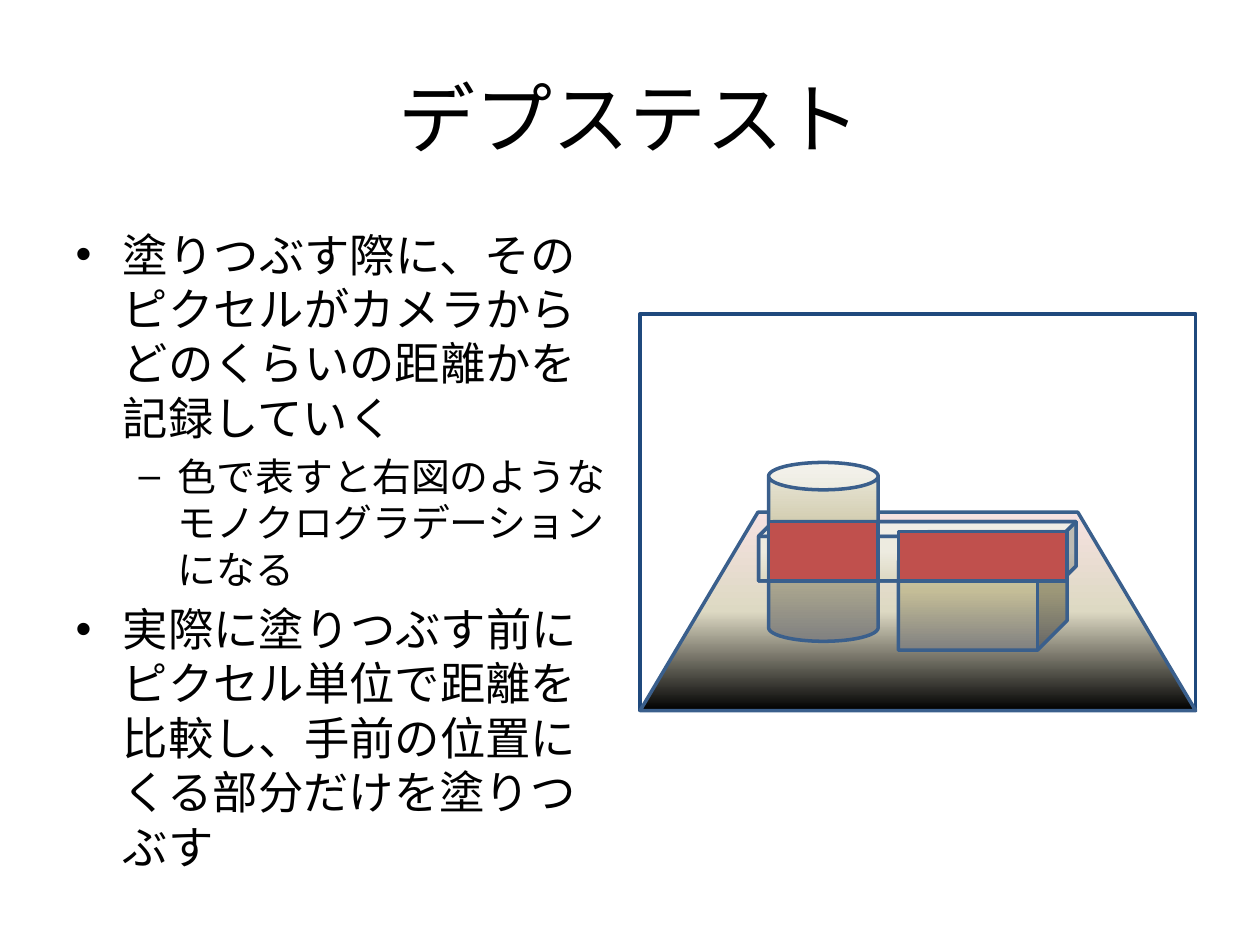
from lxml import etree
from pptx import Presentation
from pptx.dml.color import RGBColor
from pptx.enum.shapes import MSO_SHAPE as Preset
from pptx.enum.text import MSO_ANCHOR, MSO_AUTO_SIZE, PP_ALIGN
from pptx.oxml.ns import qn
from pptx.util import Inches, Pt

FONT = "Noto Sans CJK JP"
BLACK = RGBColor(0x00, 0x00, 0x00)
WHITE = RGBColor(0xFF, 0xFF, 0xFF)
NAVY = RGBColor(0x1F, 0x49, 0x7D)
OUTLINE = RGBColor(0x3A, 0x5F, 0x8C)
RED = RGBColor(0xC0, 0x50, 0x4D)
GREY = RGBColor(0x80, 0x80, 0x80)
KHAKI = RGBColor(0xC4, 0xBD, 0x97)
SAND = RGBColor(0xDD, 0xD9, 0xC3)
CREAM = RGBColor(0xEE, 0xEC, 0xE1)
PINK = RGBColor(0xF6, 0xE1, 0xE1)

BODY_SIZES = (25.9, 22.2)
BODY = [
    (0, "塗りつぶす際に、そのピクセルがカメラからどのくらいの距離かを記録していく"),
    (1, "色で表すと右図のようなモノクログラデーションになる"),
    (0, "実際に塗りつぶす前にピクセル単位で距離を比較し、手前の位置にくる部分だけを塗りつぶす"),
]


def place(shape, box):
    shape.left, shape.top, shape.width, shape.height = map(Inches, box)


def style_para(para, size):
    """Set size, colour and both the Latin and East Asian fonts."""
    para.font.size = Pt(size)
    para.font.name = FONT
    para.font.color.rgb = BLACK
    for span in para.runs:
        properties = span._r.get_or_add_rPr()
        etree.SubElement(properties, qn("a:ea")).set("typeface", FONT)


def add_title(page, box):
    title = page.shapes.title
    place(title, box)
    title.text_frame.text = "デプステスト"
    title.text_frame.vertical_anchor = MSO_ANCHOR.MIDDLE
    para = title.text_frame.paragraphs[0]
    para.alignment = PP_ALIGN.CENTER
    style_para(para, 44)


def add_body(page, box):
    body = page.placeholders[1]
    place(body, box)
    frame = body.text_frame
    frame.auto_size = MSO_AUTO_SIZE.NONE
    for index, (level, text) in enumerate(BODY):
        para = frame.paragraphs[0] if index == 0 else frame.add_paragraph()
        para.text = text
        para.level = level
        style_para(para, BODY_SIZES[level])


def fill_gradient(shape, colors, opacity):
    """Blend evenly spaced colours from the bottom of the shape to its top."""
    shape.fill.gradient()
    shape.fill.gradient_angle = 90
    stops = shape._element.spPr.find(qn("a:gradFill")).find(qn("a:gsLst"))
    for stop in list(stops):
        stops.remove(stop)
    for index, color in enumerate(colors):
        stop = etree.SubElement(stops, qn("a:gs"))
        stop.set("pos", str(index * 100000 // (len(colors) - 1)))
        value = etree.SubElement(stop, qn("a:srgbClr"))
        value.set("val", str(color))
        if opacity < 100:
            etree.SubElement(value, qn("a:alpha")).set("val", str(opacity * 1000))


def add_solid(page, preset, box, colors, line=OUTLINE, opacity=100):
    """Add an outlined shape with one plain colour or a vertical gradient."""
    shape = page.shapes.add_shape(preset, *map(Inches, box))
    shape.shadow.inherit = False
    shape.line.color.rgb = line
    shape.line.width = Pt(2)
    if len(colors) == 1:
        shape.fill.solid()
        shape.fill.fore_color.rgb = colors[0]
    else:
        fill_gradient(shape, colors, opacity)
    return shape


def add_scene(page, box):
    """Draw the floor, the three solids and the overlaps of the rear bar."""
    left, top, width, height = box
    bar = (left + 0.94, top + 1.65, 2.52, 0.47)
    can = (left + 1.02, top + 1.18, 0.87, 1.42)
    block = (left + 2.05, top + 1.73, 1.34, 0.94)
    bar_bottom = bar[1] + bar[3]

    add_solid(page, Preset.RECTANGLE, box, [WHITE], NAVY)
    floor = add_solid(page, Preset.TRAPEZOID,
                      (left, top + height / 2, width, height / 2),
                      [BLACK, SAND, PINK])
    floor.adjustments[0] = 0.594
    bar_colors = [SAND, CREAM, CREAM]
    add_solid(page, Preset.CUBE, bar, bar_colors)
    add_solid(page, Preset.CAN, can, [GREY, KHAKI, CREAM])
    add_solid(page, Preset.CUBE, block, [GREY, KHAKI, SAND])
    add_solid(page, Preset.CUBE, bar, bar_colors, opacity=50)
    for solid in (can, block):
        overlap_top = max(solid[1], bar[1])
        overlap = (solid[0], overlap_top, solid[2], bar_bottom - overlap_top)
        add_solid(page, Preset.RECTANGLE, overlap, [RED])


def main():
    deck = Presentation()
    deck.slide_width, deck.slide_height = Inches(10), Inches(7.5)
    page = deck.slides.add_slide(deck.slide_layouts[1])
    add_title(page, (0.5, 0.3, 9, 1.25))
    add_body(page, (0.5, 1.75, 4.42, 4.95))
    add_scene(page, (5.08, 2.49, 4.41, 3.15))
    deck.save("out.pptx")


if __name__ == "__main__":
    main()
